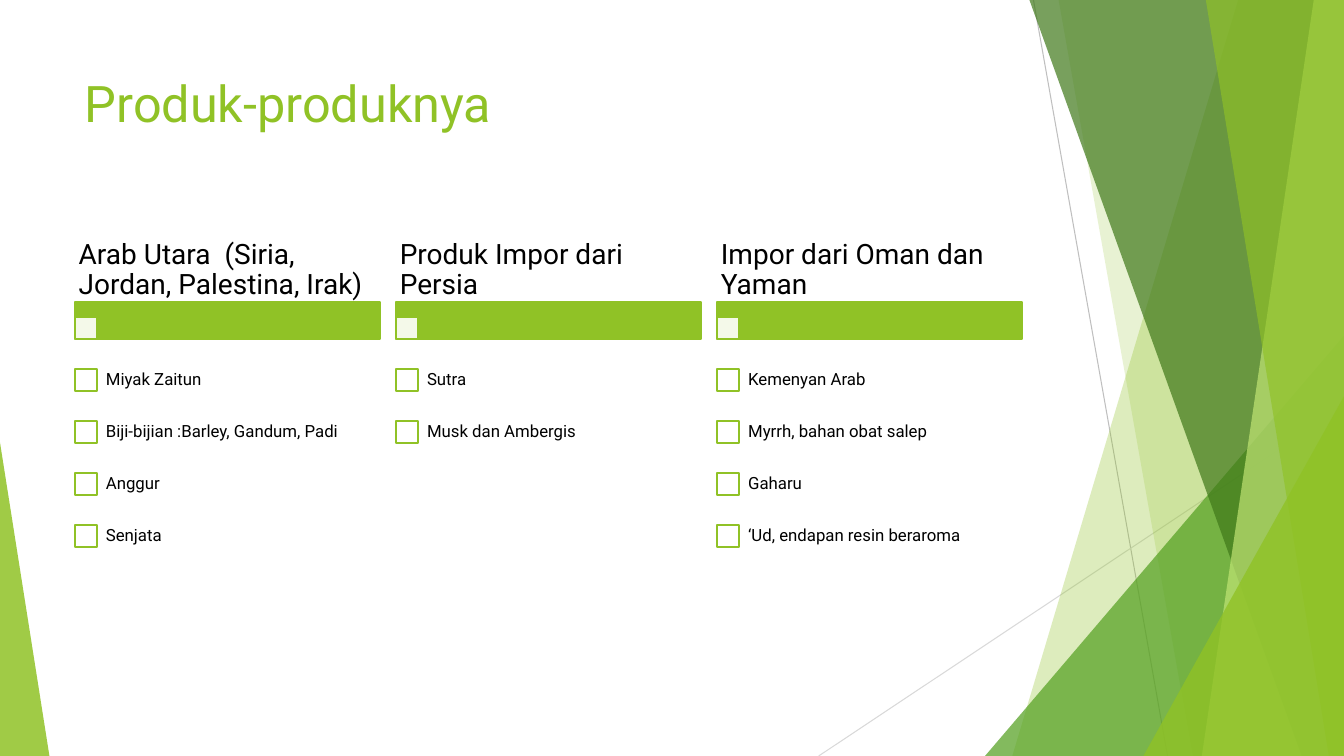
from lxml.etree import SubElement
from pptx import Presentation
from pptx.dml.color import RGBColor
from pptx.enum.shapes import MSO_CONNECTOR, MSO_SHAPE
from pptx.enum.text import MSO_ANCHOR, PP_ALIGN
from pptx.oxml.ns import qn
from pptx.util import Inches, Pt

COLORS = {
    "lime": "90C226", "green": "54A021", "forest": "3F7819", "pale": "C0E474",
    "white": "FFFFFF", "black": "000000", "gray": "BFBFBF", "light_gray": "D9D9D9",
}
FONT = "Roboto"
SLIDE_W, SLIDE_H = 13.33, 7.5
COL_W, COL_PITCH = 3.03, 3.185
HEAD_H, BAR_H, BOX, ROW_H = 0.64, 0.36, 0.22, 0.517

COLUMNS = [
    ("Arab Utara  (Siria, Jordan, Palestina, Irak)",
     ["Miyak Zaitun", "Biji-bijian :Barley, Gandum, Padi", "Anggur", "Senjata"]),
    ("Produk Impor dari Persia", ["Sutra", "Musk dan Ambergis"]),
    ("Impor dari Oman dan Yaman",
     ["Kemenyan Arab", "Myrrh, bahan obat salep", "Gaharu", "‘Ud, endapan resin beraroma"]),
]


def rgb(name):
    """Return the named colour."""
    return RGBColor.from_string(COLORS[name])


def paint(sp, fill, alpha=100, line=None):
    """Set the fill, its opacity and the outline of a shape."""
    sp.shadow.inherit = False
    sp.fill.solid()
    sp.fill.fore_color.rgb = rgb(fill)
    if alpha < 100:
        clr = sp.fill._xPr.find(qn("a:solidFill"))[0]
        SubElement(clr, qn("a:alpha")).set("val", str(alpha * 1000))
    if line:
        sp.line.color.rgb = rgb(line)
        sp.line.width = Pt(1.5)
    else:
        sp.line.fill.background()


def write(sp, text, size=12, color="black", anchor=MSO_ANCHOR.MIDDLE,
          insets=(0.09, 0.09), spacing=0.9):
    """Write one formatted paragraph into a shape."""
    tf = sp.text_frame
    tf.word_wrap = True
    tf.vertical_anchor = anchor
    tf.margin_left = tf.margin_right = Inches(insets[0])
    tf.margin_top = tf.margin_bottom = Inches(insets[1])
    p = tf.paragraphs[0]
    p.alignment = PP_ALIGN.LEFT
    p.line_spacing = spacing
    r = p.add_run()
    r.text = text
    r.font.name = FONT
    r.font.size = Pt(size)
    r.font.color.rgb = rgb(color)


def add_rect(s, x, y, w, h, fill, alpha=100):
    """Add a rectangle outlined in lime."""
    sp = s.shapes.add_shape(MSO_SHAPE.RECTANGLE, Inches(x), Inches(y), Inches(w), Inches(h))
    paint(sp, fill, alpha, "lime")


def add_text(s, x, y, w, h, text, **fmt):
    """Add a text box with formatted text."""
    write(s.shapes.add_textbox(Inches(x), Inches(y), Inches(w), Inches(h)), text, **fmt)


def add_ray(s, x1, y1, x2, y2, color):
    """Add a thin background line."""
    cn = s.shapes.add_connector(MSO_CONNECTOR.STRAIGHT, Inches(x1), Inches(y1),
                                Inches(x2), Inches(y2))
    cn.line.color.rgb = rgb(color)
    cn.line.width = Pt(0.75)
    SubElement(cn._element.spPr, qn("a:effectLst"))


def add_facet(s, top, bottom, fill, alpha):
    """Add a full-height facet between a slanted edge and the right side."""
    fb = s.shapes.build_freeform(Inches(top), 0)
    fb.add_line_segments([(Inches(x), Inches(y)) for x, y in
                          ((SLIDE_W, 0), (SLIDE_W, SLIDE_H), (bottom, SLIDE_H))])
    paint(fb.convert_to_shape(), fill, alpha)


def add_corner(s, x, w, h, peak, fill, alpha):
    """Add a right triangle standing on the bottom edge."""
    sp = s.shapes.add_shape(MSO_SHAPE.ISOSCELES_TRIANGLE, Inches(x), Inches(SLIDE_H - h),
                            Inches(w), Inches(h))
    sp.adjustments[0] = peak
    paint(sp, fill, alpha)


def add_backdrop(s):
    """Draw the faceted green backdrop from back to front."""
    add_ray(s, 10.25, 0, 11.58, SLIDE_H, "gray")
    add_ray(s, SLIDE_W, 4.03, 8.12, SLIDE_H, "light_gray")
    add_facet(s, 12.28, 10.04, "lime", 30)
    add_facet(s, 10.5, 11.83, "lime", 20)
    add_corner(s, 9.77, 3.56, 4.17, 1, "green", 72)
    add_facet(s, 10.21, 12.91, "forest", 70)
    add_facet(s, 13.03, 11.92, "pale", 70)
    add_facet(s, 11.96, 13.18, "lime", 65)
    add_corner(s, 11.34, 1.99, 3.57, 1, "lime", 80)
    add_corner(s, 0, 0.49, 3.11, 0, "lime", 85)


def add_title(s, x, y, w, h, text):
    """Place and fill the title placeholder."""
    sp = s.shapes.title
    sp.left, sp.top, sp.width, sp.height = (Inches(v) for v in (x, y, w, h))
    write(sp, text, size=36, color="lime", anchor=MSO_ANCHOR.TOP,
          insets=(0.1, 0.05), spacing=1.0)


def add_column(s, x, y, w, heading, items):
    """Draw a heading, its bar and a list of boxed items."""
    bar_y = y + HEAD_H
    bar_end = bar_y + BAR_H
    add_rect(s, x, bar_y, w, BAR_H, "lime")
    add_rect(s, x, bar_end - BOX, BOX, BOX, "white", 90)
    add_text(s, x, y, w, HEAD_H, heading, size=20, insets=(0.04, 0.03))
    for i, item in enumerate(items):
        row_y = bar_end + 0.15 + i * ROW_H
        add_rect(s, x, row_y + (ROW_H - BOX) / 2, BOX, BOX, "white")
        add_text(s, x + BOX, row_y, w - BOX, ROW_H, item)


def main():
    """Build and save the slide."""
    prs = Presentation()
    prs.slide_width, prs.slide_height = Inches(SLIDE_W), Inches(SLIDE_H)
    s = prs.slides.add_slide(prs.slide_layouts[5])
    add_backdrop(s)
    add_title(s, 0.74, 0.67, 9.4, 1.44, "Produk-produknya")
    for i, (heading, items) in enumerate(COLUMNS):
        add_column(s, 0.74 + i * COL_PITCH, 2.36, COL_W, heading, items)
    prs.save("out.pptx")


if __name__ == "__main__":
    main()
